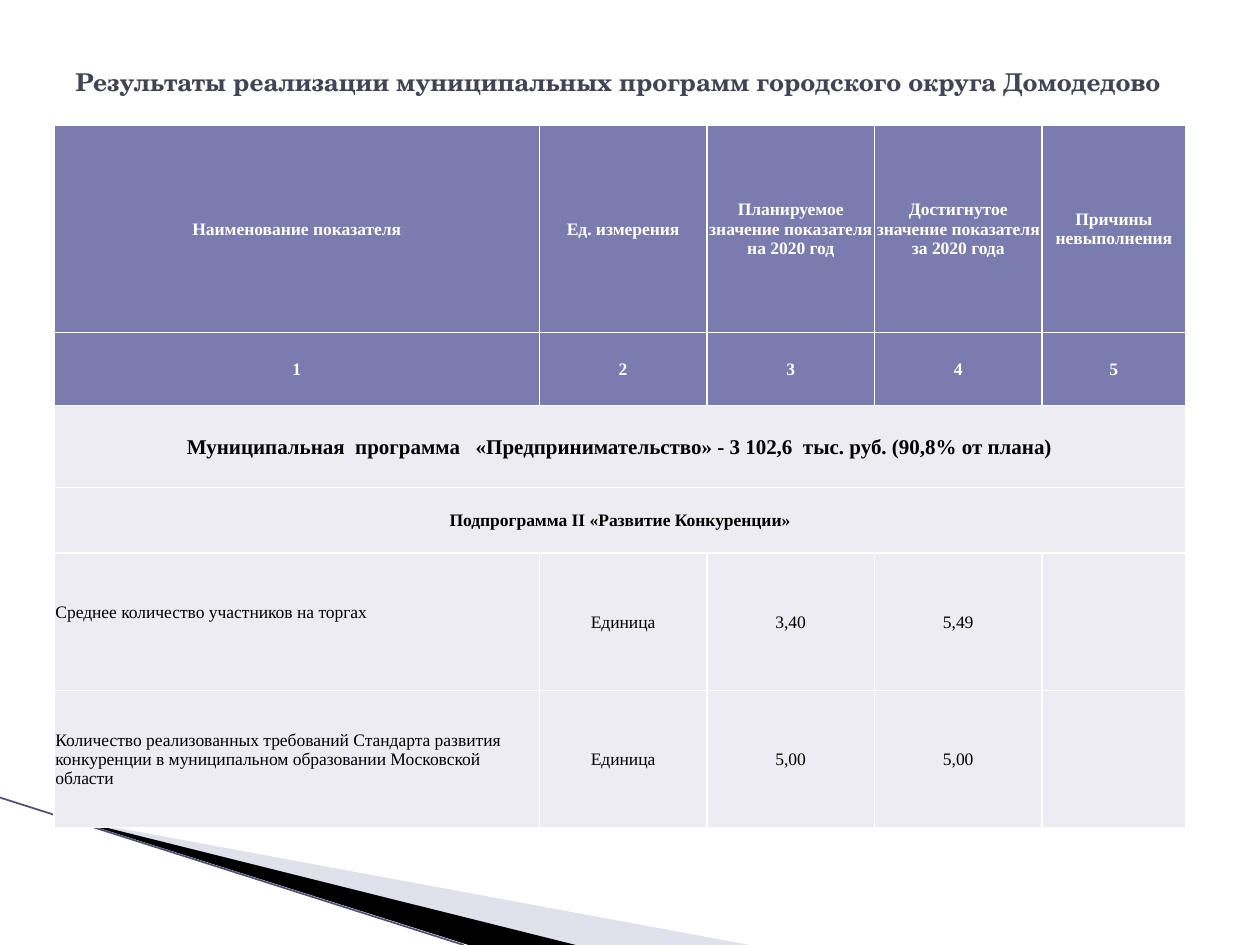
import pptx
import pptx.dml.color
import pptx.enum.shapes
import pptx.enum.text
import pptx.oxml.ns
import pptx.util
from lxml import etree

Inches = pptx.util.Inches
Pt = pptx.util.Pt
RGBColor = pptx.dml.color.RGBColor
qn = pptx.oxml.ns.qn
PP_ALIGN = pptx.enum.text.PP_ALIGN
MIDDLE = pptx.enum.text.MSO_ANCHOR.MIDDLE

WHITE = RGBColor(0xFF, 0xFF, 0xFF)
BLACK = RGBColor(0, 0, 0)
HEADING = RGBColor(0x42, 0x44, 0x56)
HEADER_FILL = RGBColor(0x7A, 0x7B, 0xAE)
BODY_FILL = RGBColor(0xEC, 0xEC, 0xF2)
LILAC = RGBColor(0xB6, 0xB6, 0xD1)
EDGE = RGBColor(0x50, 0x50, 0x7E)

# Content
TITLE = "Результаты реализации муниципальных программ городского округа Домодедово"
HEADER_ROWS = [
    ["Наименование показателя", "Ед. измерения",
     "Планируемое значение показателя на 2020 год",
     "Достигнутое значение показателя за 2020 года",
     "Причины невыполнения"],
    ["1", "2", "3", "4", "5"],
]
BANNER_ROWS = [
    ("Муниципальная  программа   «Предпринимательство» - 3 102,6  тыс. руб. (90,8% от плана)", 12),
    ("Подпрограмма II «Развитие Конкуренции»", 10),
]
INDICATOR_ROWS = [
    ["Среднее количество участников на торгах", "Единица", "3,40", "5,49", ""],
    ["Количество реализованных требований Стандарта развития конкуренции "
     "в муниципальном образовании Московской области", "Единица", "5,00", "5,00", ""],
]
COLUMN_WIDTHS = [3.85, 1.33, 1.33, 1.33, 1.14]
ROW_HEIGHTS = [1.65, 0.58, 0.65, 0.52, 1.09, 1.09]

# Corner wedges: points, colour, opacity in percent
WEDGES = [
    ([(0.55, 6.5), (5.95, 7.5), (4.56, 7.5)], LILAC, 40),
    ([(0.53, 6.49), (4.57, 7.5), (3.72, 7.5)], BLACK, 100),
]


def add_wedge(shapes, points, color, opacity):
    corners = [(Inches(x), Inches(y)) for x, y in points]
    builder = shapes.build_freeform(*corners[0])
    builder.add_line_segments(corners[1:], close=True)
    wedge = builder.convert_to_shape()
    wedge.shadow.inherit = False
    wedge.line.fill.background()
    wedge.fill.solid()
    wedge.fill.fore_color.rgb = color
    if opacity < 100:
        tint = wedge.fill._xPr.find(".//" + qn("a:srgbClr"))
        etree.SubElement(tint, qn("a:alpha"), val=str(opacity * 1000))


def add_borders(cell):
    properties = cell._tc.get_or_add_tcPr()
    for index, side in enumerate(("lnL", "lnR", "lnT", "lnB")):
        border = etree.Element(qn("a:" + side), w=str(Pt(1)))
        fill = etree.SubElement(border, qn("a:solidFill"))
        etree.SubElement(fill, qn("a:srgbClr"), val=str(WHITE))
        properties.insert(index, border)


def style_text(paragraph, font_name, size, color, bold):
    for run in paragraph.runs:
        run.font.name = font_name
        run.font.size = Pt(size)
        run.font.color.rgb = color
        run.font.bold = bold


def fill_cell(cell, text, fill, color=BLACK, size=10, bold=False, align=PP_ALIGN.CENTER):
    cell.fill.solid()
    cell.fill.fore_color.rgb = fill
    add_borders(cell)
    cell.vertical_anchor = MIDDLE
    cell.margin_left = cell.margin_right = cell.margin_top = Inches(0.01)
    cell.margin_bottom = 0
    cell.text_frame.text = text
    paragraph = cell.text_frame.paragraphs[0]
    paragraph.alignment = align
    style_text(paragraph, "Times New Roman", size, color, bold)


def main():
    deck = pptx.Presentation()
    deck.slide_width, deck.slide_height = Inches(10), Inches(7.5)
    shapes = deck.slides.add_slide(deck.slide_layouts[6]).shapes

    # Corner decoration
    for points, color, opacity in WEDGES:
        add_wedge(shapes, points, color, opacity)
    edge = shapes.add_connector(pptx.enum.shapes.MSO_CONNECTOR.STRAIGHT,
                                0, Inches(6.33), Inches(3.68), Inches(7.5))
    edge.line.color.rgb = EDGE
    edge.line.width = Pt(1)
    etree.SubElement(edge._element.spPr, qn("a:effectLst"))

    # Title
    title = shapes.add_textbox(Inches(0.5), Inches(0.3), Inches(9), Inches(0.69)).text_frame
    title.word_wrap = True
    title.vertical_anchor = MIDDLE
    title.text = TITLE
    style_text(title.paragraphs[0], "TeX Gyre Schola", 14, HEADING, True)

    # Indicator table
    table = shapes.add_table(len(ROW_HEIGHTS), len(COLUMN_WIDTHS), Inches(0.43), Inches(0.99),
                             Inches(sum(COLUMN_WIDTHS)), Inches(sum(ROW_HEIGHTS))).table
    for column, width in zip(table.columns, COLUMN_WIDTHS):
        column.width = Inches(width)
    for row, height in zip(table.rows, ROW_HEIGHTS):
        row.height = Inches(height)

    for r, labels in enumerate(HEADER_ROWS):
        for c, label in enumerate(labels):
            fill_cell(table.cell(r, c), label, HEADER_FILL, WHITE, bold=True)

    first_banner = len(HEADER_ROWS)
    last_column = len(COLUMN_WIDTHS) - 1
    for r, (banner, size) in enumerate(BANNER_ROWS, first_banner):
        for c in range(last_column + 1):
            fill_cell(table.cell(r, c), "", BODY_FILL)
        table.cell(r, 0).merge(table.cell(r, last_column))
        fill_cell(table.cell(r, 0), banner, BODY_FILL, size=size, bold=True)

    first_indicator = first_banner + len(BANNER_ROWS)
    for r, values in enumerate(INDICATOR_ROWS, first_indicator):
        for c, value in enumerate(values):
            align = PP_ALIGN.CENTER if c else PP_ALIGN.LEFT
            fill_cell(table.cell(r, c), value, BODY_FILL, align=align)
    # The first indicator name sits slightly above the middle
    table.cell(first_indicator, 0).margin_bottom = Inches(0.15)

    deck.save("out.pptx")


if __name__ == "__main__":
    main()
